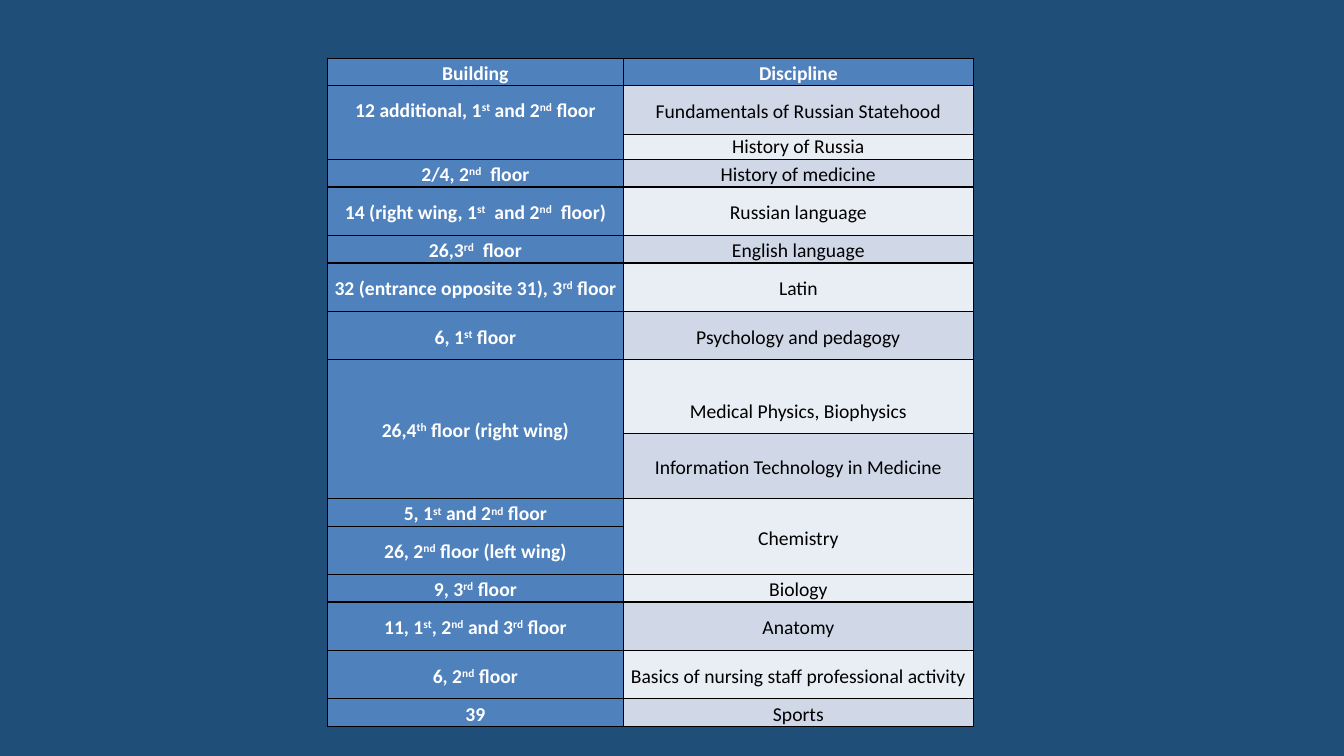
from lxml.etree import SubElement
from pptx import Presentation
from pptx.dml.color import RGBColor
from pptx.enum.text import MSO_ANCHOR, PP_ALIGN
from pptx.oxml.ns import qn
from pptx.util import Cm, Pt

SHORT, TALL = 0.58, 1.22
ROWS = [
    (SHORT, "Building", "Discipline"),
    (TALL, "12 additional, 1^st^ and 2^nd^ floor", "Fundamentals of Russian Statehood"),
    (0.64, None, "History of Russia"),
    (0.66, "2/4, 2^nd^  floor", "History of medicine"),
    (TALL, "14 (right wing, 1^st^  and 2^nd^  floor)", "Russian language"),
    (SHORT, "26,3^rd^  floor", "English language"),
    (TALL, "32 (entrance opposite 31), 3^rd^ floor", "Latin"),
    (TALL, "6, 1^st^ floor", "Psychology and pedagogy"),
    (1.85, "26,4^th^ floor (right wing)", "Medical Physics, Biophysics"),
    (1.65, None, "Information Technology in Medicine"),
    (0.66, "5, 1^st^ and 2^nd^ floor", "Chemistry"),
    (TALL, "26, 2^nd^ floor (left wing)", None),
    (SHORT, "9, 3^rd^ floor", "Biology"),
    (TALL, "11, 1^st^, 2^nd^ and 3^rd^ floor", "Anatomy"),
    (TALL, "6, 2^nd^ floor", "Basics of nursing staff professional activity"),
    (SHORT, "39", "Sports"),
]


def rgb(color):
    return RGBColor.from_string(color)


class Deck:
    font, size = "Calibri", Pt(14)
    navy, blue, white, black = "1F4E79", "4F81BD", "FFFFFF", "000000"
    bands = ("E9EDF4", "D0D8E8")

    def __init__(self):
        self.prs = Presentation()
        self.prs.slide_width, self.prs.slide_height = Cm(33.87), Cm(19.05)
        self.s = self.prs.slides.add_slide(self.prs.slide_layouts[6])

    def background(self):
        fill = self.s.background.fill
        fill.solid()
        fill.fore_color.rgb = rgb(self.navy)

    def borders(self, cell):
        tc_pr = cell._tc.get_or_add_tcPr()
        for side in ("a:lnL", "a:lnR", "a:lnT", "a:lnB"):
            ln = SubElement(tc_pr, qn(side), w=str(Pt(1)))
            SubElement(SubElement(ln, qn("a:solidFill")), qn("a:srgbClr"), val=self.black)

    def text(self, cell, text, color, bold, spacing):
        p = cell.text_frame.paragraphs[0]
        p.alignment, p.line_spacing = PP_ALIGN.CENTER, spacing
        for i, part in enumerate(text.split("^")):
            r = p.add_run()
            r.text = part
            r.font.name, r.font.size, r.font.bold = self.font, self.size, bold
            r.font.color.rgb = rgb(color)
            if i % 2:
                r.font._element.set("baseline", "30000")

    def cell(self, cell, text, fill, color, bold, spacing):
        cell.margin_left = cell.margin_right = Cm(0.1)
        cell.margin_top = cell.margin_bottom = 0
        cell.vertical_anchor = MSO_ANCHOR.MIDDLE
        self.borders(cell)
        cell.fill.solid()
        cell.fill.fore_color.rgb = rgb(fill)
        if text:
            self.text(cell, text, color, bold, spacing)

    def table(self, rows, left, top, widths):
        height = sum(row[0] for row in rows)
        table = self.s.shapes.add_table(
            len(rows), len(widths), Cm(left), Cm(top), Cm(sum(widths)), Cm(height)).table
        for column, width in zip(table.columns, widths):
            column.width = Cm(width)
        for i, (height, *texts) in enumerate(rows):
            table.rows[i].height = Cm(height)
            for j, text in enumerate(texts):
                head = i == 0 or j == 0
                self.cell(table.cell(i, j), text,
                          self.blue if head else self.bands[i % 2],
                          self.white if head else self.black, head,
                          1.0 if text == "History of Russia" else 1.15)
                if text is None:
                    table.cell(i - 1, j).merge(table.cell(i, j))
        return table


def main():
    deck = Deck()
    deck.background()
    table = deck.table(ROWS, 8.25, 1.47, (7.46, 8.82))
    table.cell(1, 0).margin_bottom = Cm(0.69)
    table.cell(8, 1).margin_top = Cm(0.69)
    deck.prs.save("out.pptx")


if __name__ == "__main__":
    main()
